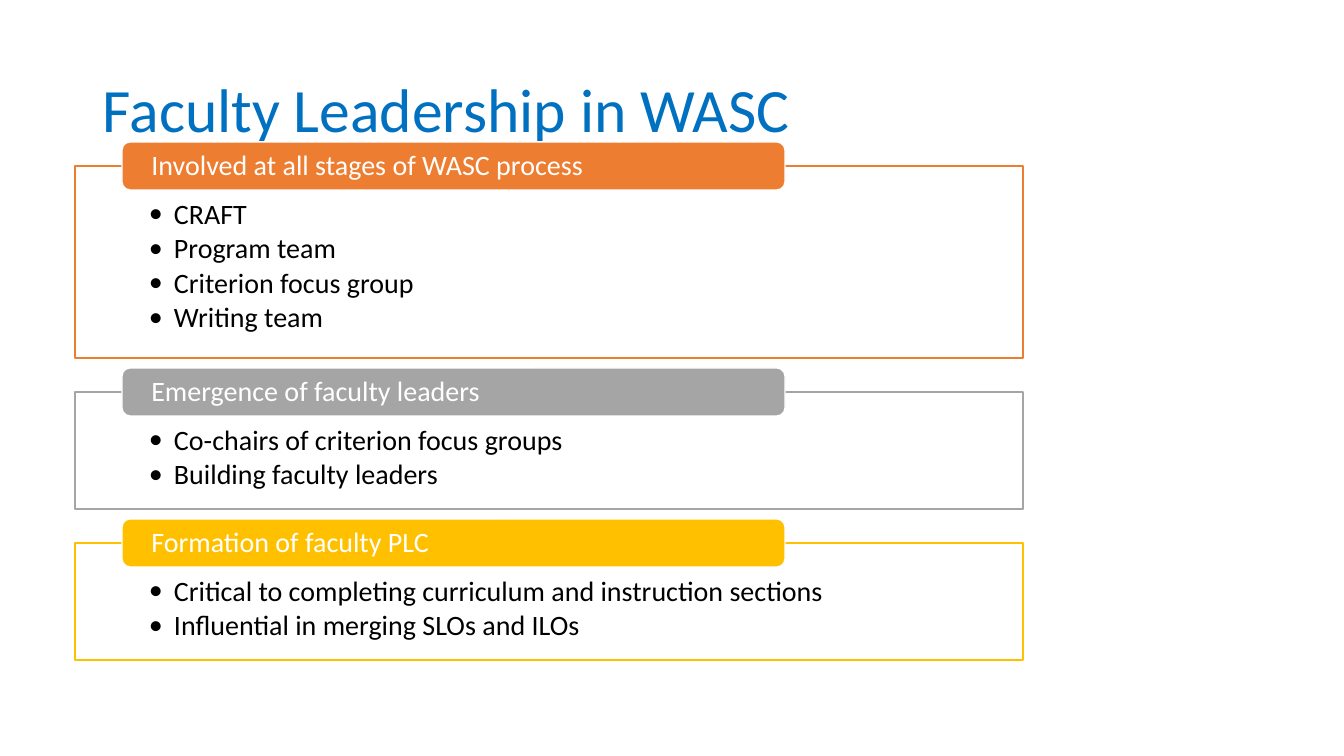
from dataclasses import dataclass

from lxml.etree import SubElement
from pptx import Presentation
from pptx.dml.color import RGBColor
from pptx.enum.shapes import MSO_SHAPE
from pptx.enum.text import MSO_ANCHOR, PP_ALIGN
from pptx.oxml.ns import qn
from pptx.shapes.autoshape import Shape
from pptx.slide import Slide
from pptx.util import Emu, Pt

PX = 914400 / 100.8
WHITE = RGBColor(0xFF, 0xFF, 0xFF)
BLACK = RGBColor(0x00, 0x00, 0x00)
BLUE = RGBColor(0x00, 0x70, 0xC0)
ORANGE = RGBColor(0xED, 0x7D, 0x31)
GRAY = RGBColor(0xA5, 0xA5, 0xA5)
GOLD = RGBColor(0xFF, 0xC0, 0x00)

FRAME_LEFT, FRAME_TOP, FRAME_WIDTH, FRAME_GAP = 75, 166, 948, 34
TAB_LEFT, TAB_RISE, TAB_WIDTH, TAB_HEIGHT = 122, 24, 663, 48
BULLET_INDENT = 25


@dataclass(frozen=True)
class Panel:
    heading: str
    bullets: tuple[str, ...]
    color: RGBColor
    height: int


PANELS = (
    Panel(
        "Involved at all stages of WASC process",
        ("CRAFT", "Program team", "Criterion focus group", "Writing team"),
        ORANGE,
        192,
    ),
    Panel(
        "Emergence of faculty leaders",
        ("Co-chairs of criterion focus groups", "Building faculty leaders"),
        GRAY,
        117,
    ),
    Panel(
        "Formation of faculty PLC",
        (
            "Critical to completing curriculum and instruction sections",
            "Influential in merging SLOs and ILOs",
        ),
        GOLD,
        117,
    ),
)


def px(n: int) -> Emu:
    return Emu(round(n * PX))


def write(
    sp: Shape,
    *lines: str,
    size: int = 20,
    color: RGBColor = BLACK,
    anchor: MSO_ANCHOR = MSO_ANCHOR.MIDDLE,
    margins: tuple[int, int, int, int] = (10, 5, 10, 5),
    after: int = 0,
    bullet: bool = False,
) -> None:
    tf = sp.text_frame
    tf.word_wrap = True
    tf.vertical_anchor = anchor
    tf.margin_left, tf.margin_top, tf.margin_right, tf.margin_bottom = map(px, margins)
    for i, line in enumerate(lines):
        p = tf.paragraphs[0] if i == 0 else tf.add_paragraph()
        p.alignment = PP_ALIGN.LEFT
        p.line_spacing = 0.9
        p.space_after = Pt(after)
        if bullet:
            pPr = p._p.get_or_add_pPr()
            pPr.set("marL", str(px(BULLET_INDENT)))
            pPr.set("indent", str(-px(BULLET_INDENT)))
            SubElement(pPr, qn("a:buFont")).set("typeface", "Calibri")
            SubElement(pPr, qn("a:buChar")).set("char", "•")
        r = p.add_run()
        r.text = line
        r.font.name = "Calibri"
        r.font.size = Pt(size)
        r.font.color.rgb = color


def add_box(
    s: Slide,
    kind: MSO_SHAPE,
    box: tuple[int, int, int, int],
    fill: RGBColor,
    line: RGBColor,
) -> Shape:
    sp = s.shapes.add_shape(kind, *map(px, box))
    sp.shadow.inherit = False
    sp.fill.solid()
    sp.fill.fore_color.rgb = fill
    sp.line.color.rgb = line
    sp.line.width = Pt(1)
    return sp


def add_panel(s: Slide, panel: Panel, top: int) -> None:
    frame = add_box(
        s,
        MSO_SHAPE.RECTANGLE,
        (FRAME_LEFT, top, FRAME_WIDTH, panel.height),
        WHITE,
        panel.color,
    )
    fill = frame._element.spPr.find(qn("a:solidFill"))
    SubElement(fill[0], qn("a:alpha")).set("val", "90000")
    write(
        frame,
        *panel.bullets,
        anchor=MSO_ANCHOR.TOP,
        margins=(74, 34, 74, 16),
        after=3,
        bullet=True,
    )
    tab = add_box(
        s,
        MSO_SHAPE.ROUNDED_RECTANGLE,
        (TAB_LEFT, top - TAB_RISE, TAB_WIDTH, TAB_HEIGHT),
        panel.color,
        WHITE,
    )
    write(tab, panel.heading, color=WHITE, margins=(27, 0, 27, 0))


def main() -> None:
    prs = Presentation()
    prs.slide_width, prs.slide_height = px(1344), px(756)
    s = prs.slides.add_slide(prs.slide_layouts[6])
    title = s.shapes.add_textbox(*map(px, (93, 40, 1159, 146)))
    write(title, "Faculty Leadership in WASC", size=44, color=BLUE)
    top = FRAME_TOP
    for panel in PANELS:
        add_panel(s, panel, top)
        top += panel.height + FRAME_GAP
    prs.save("out.pptx")


if __name__ == "__main__":
    main()
